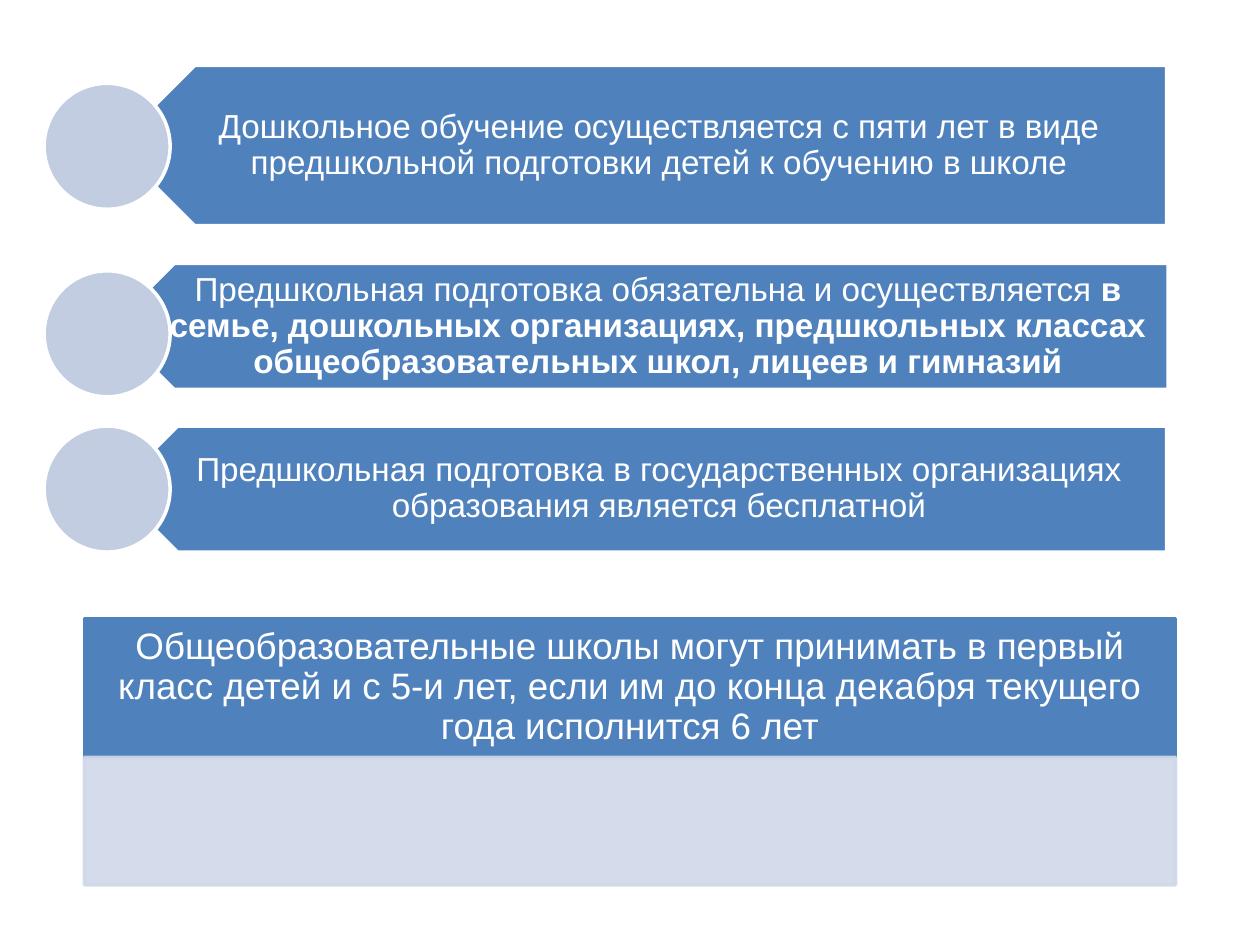
from dataclasses import dataclass

from lxml import etree
from pptx import Presentation
from pptx.dml.color import RGBColor
from pptx.enum import shapes, text
from pptx.oxml import ns
from pptx.util import Cm, Pt

BLUE = RGBColor(0x4F, 0x81, 0xBD)
CIRCLE_BLUE = RGBColor(0xC2, 0xCD, 0xE1)
PALE_BLUE = RGBColor(0xD0, 0xD8, 0xE8)
WHITE = RGBColor(0xFF, 0xFF, 0xFF)

CIRCLE_LEFT = 0.89
CIRCLE_SIZE = 2.54
PANEL_LEFT, PANEL_WIDTH = 1.7, 22.0


@dataclass
class Box:
    """A rectangle in centimetres."""
    left: float
    top: float
    width: float
    height: float

    def lengths(self) -> list[Cm]:
        return [Cm(v) for v in (self.left, self.top, self.width, self.height)]


@dataclass
class Row:
    box: Box
    circle_top: float
    plain: str
    bold: str = ""


ROWS = [
    Row(Box(2.31, 1.32, 21.21, 3.23), 1.68,
        "Дошкольное обучение осуществляется с пяти лет в виде "
        "предшкольной подготовки детей к обучению в школе"),
    Row(Box(2.24, 5.31, 21.31, 2.54), 5.46,
        "Предшкольная подготовка обязательна и осуществляется ",
        "в семье, дошкольных организациях, предшкольных классах "
        "общеобразовательных школ, лицеев и гимназий"),
    Row(Box(2.31, 8.59, 21.21, 2.54), 8.59,
        "Предшкольная подготовка в государственных организациях "
        "образования является бесплатной"),
]
ADMISSION = ("Общеобразовательные школы могут принимать в первый класс детей "
             "и с 5-и лет, если им до конца декабря текущего года исполнится 6 лет")


def add_shape(s, kind, box: Box, fill: RGBColor, line: RGBColor):
    sp = s.shapes.add_shape(kind, *box.lengths())
    sp.shadow.inherit = False
    sp.fill.solid()
    sp.fill.fore_color.rgb = fill
    sp.line.color.rgb = line
    sp.line.width = Pt(2)
    return sp


def set_opacity(sp, percent: int) -> None:
    """Apply one opacity to both the fill and the line."""
    for clr in sp.element.spPr.iter(ns.qn("a:srgbClr")):
        etree.SubElement(clr, ns.qn("a:alpha"), val=str(percent * 1000))


def write_text(sp, insets: tuple[float, float, float], size: int,
               plain: str, bold: str = "") -> None:
    """Write centred white text; insets are left, right and top/bottom in cm."""
    tf = sp.text_frame
    tf.word_wrap = True
    tf.vertical_anchor = text.MSO_ANCHOR.MIDDLE
    tf.margin_left, tf.margin_right, tf.margin_top = (Cm(v) for v in insets)
    tf.margin_bottom = tf.margin_top
    p = tf.paragraphs[0]
    p.alignment = text.PP_ALIGN.CENTER
    p.line_spacing = 0.9
    p.font.name = "Arial"
    p.font.size = Pt(size)
    p.font.color.rgb = WHITE
    p.add_run().text = plain
    if bold:
        r = p.add_run()
        r.text = bold
        r.font.bold = True


def add_panel(s) -> None:
    rect = shapes.MSO_SHAPE.RECTANGLE
    header = add_shape(s, rect, Box(PANEL_LEFT, 12.47, PANEL_WIDTH, 2.79), BLUE, BLUE)
    write_text(header, (0.41, 0.41, 0.23), 21, ADMISSION)
    body = add_shape(s, rect, Box(PANEL_LEFT, 15.27, PANEL_WIDTH, 2.57),
                     PALE_BLUE, PALE_BLUE)
    set_opacity(body, 90)


def add_row(s, row: Row) -> None:
    arrow = add_shape(s, shapes.MSO_SHAPE.PENTAGON, row.box, BLUE, WHITE)
    arrow.rotation = 180
    # The arrow is turned round, so upright text needs its own box.
    label = s.shapes.add_textbox(*row.box.lengths())
    write_text(label, (1.12, 0.38, 0.2), 19, row.plain, row.bold)
    add_shape(s, shapes.MSO_SHAPE.OVAL,
              Box(CIRCLE_LEFT, row.circle_top, CIRCLE_SIZE, CIRCLE_SIZE),
              CIRCLE_BLUE, WHITE)


def main() -> None:
    prs = Presentation()
    prs.slide_width, prs.slide_height = Cm(25.4), Cm(19.05)
    s = prs.slides.add_slide(prs.slide_layouts[6])
    add_panel(s)
    for row in ROWS:
        add_row(s, row)
    prs.save("out.pptx")


if __name__ == "__main__":
    main()
